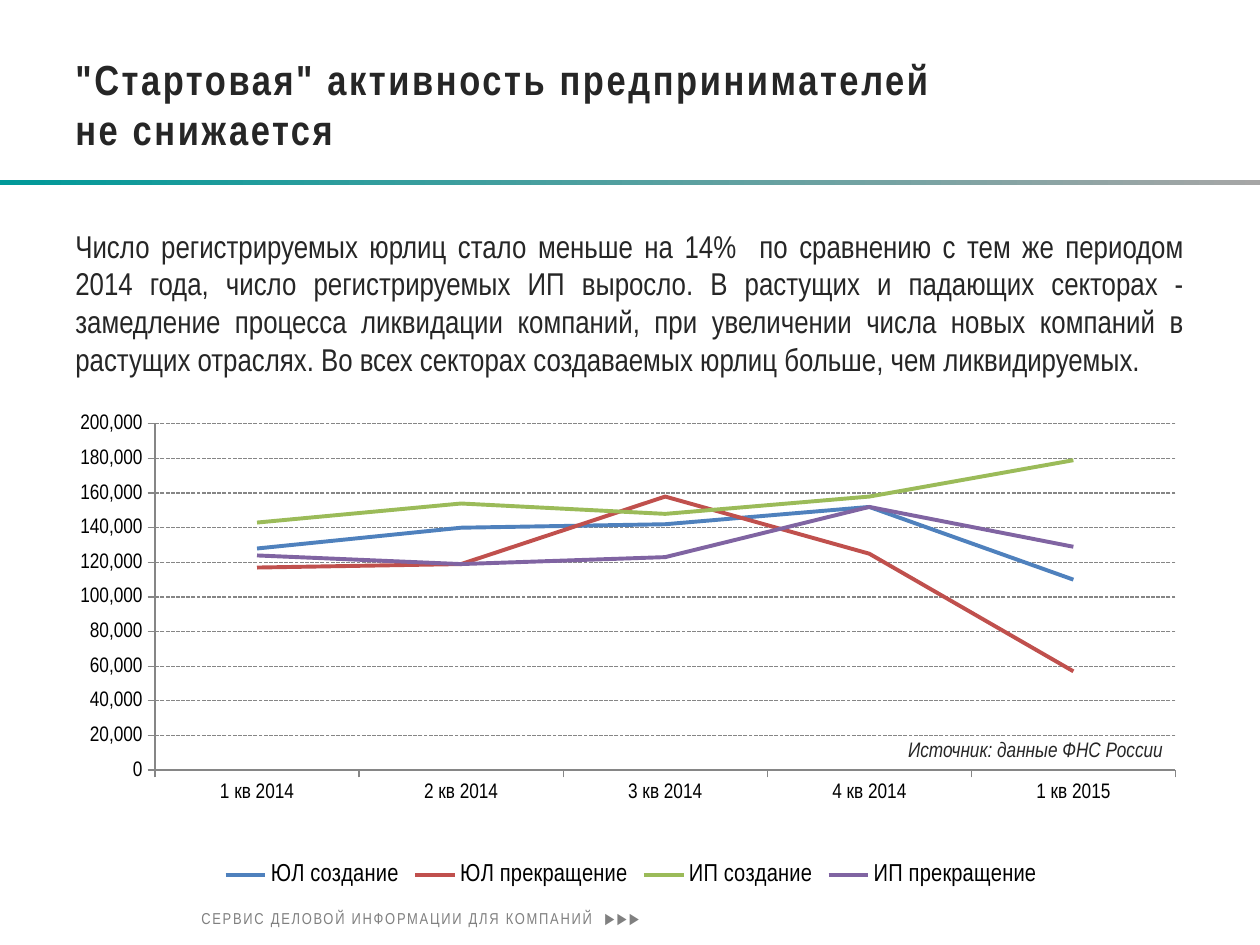
from lxml import etree
from pptx import Presentation
from pptx.chart.data import CategoryChartData
from pptx.dml.color import RGBColor
from pptx.enum.chart import (XL_CHART_TYPE, XL_LEGEND_POSITION, XL_MARKER_STYLE,
                             XL_TICK_LABEL_POSITION, XL_TICK_MARK)
from pptx.enum.dml import MSO_LINE
from pptx.enum.shapes import MSO_SHAPE
from pptx.enum.text import MSO_ANCHOR, PP_ALIGN
from pptx.oxml.ns import qn
from pptx.util import Inches, Pt

LINE_CHART = XL_CHART_TYPE.LINE
NO_MARKER = XL_MARKER_STYLE.NONE
LABELS_LOW = XL_TICK_LABEL_POSITION.LOW
TICK_OUT, TICK_NONE = XL_TICK_MARK.OUTSIDE, XL_TICK_MARK.NONE
LEGEND_BOTTOM = XL_LEGEND_POSITION.BOTTOM
SQUARE_DOT = MSO_LINE.SQUARE_DOT
RECTANGLE = MSO_SHAPE.RECTANGLE
TOP, MIDDLE = MSO_ANCHOR.TOP, MSO_ANCHOR.MIDDLE
LEFT, RIGHT, JUSTIFY = PP_ALIGN.LEFT, PP_ALIGN.RIGHT, PP_ALIGN.JUSTIFY

COLORS = {
    "text": "262626", "footer": "808080", "axis": "868686", "label": "000000",
    "teal": "009999", "grey": "A6A6A6",
    "blue": "4F81BD", "red": "C0504D", "green": "9BBB59", "purple": "8064A2",
}


def rgb(name):
    return RGBColor.from_string(COLORS[name])


class SlideBuilder:
    font_name = "Arial Narrow"

    def __init__(self, page):
        self.page = page

    def text(self, place, lines, size, color="text", align=LEFT, anchor=TOP,
             bold=False, italic=False, spacing=0):
        box = self.page.shapes.add_textbox(*map(Inches, place))
        frame = box.text_frame
        frame.word_wrap = True
        frame.vertical_anchor = anchor
        para = frame.paragraphs[0]
        para.alignment = align
        for index, line in enumerate(lines):
            if index:
                para.add_line_break()
            span = para.add_run()
            span.text = line
            self.style(span.font, size, color)
            span.font.bold, span.font.italic = bold, italic
            if spacing:
                span.font._element.set("spc", str(int(spacing * 100)))

    def style(self, font, size, color="label"):
        font.name = self.font_name
        font.size = Pt(size)
        font.color.rgb = rgb(color)

    def gradient_band(self, place, start, end):
        band = self.page.shapes.add_shape(RECTANGLE, *map(Inches, place))
        band.shadow.inherit = False
        band.line.fill.background()
        band.fill.gradient()
        band.fill.gradient_angle = 0
        for stop, name in zip(band.fill.gradient_stops, (start, end)):
            stop.color.rgb = rgb(name)

    def line_chart(self, place, categories, series_rows, plot_area):
        data = CategoryChartData(number_format="#,##0")
        data.categories = categories
        for name, _, values in series_rows:
            data.add_series(name, values)
        chart = self.page.shapes.add_chart(
            LINE_CHART, *map(Inches, place), data).chart
        chart.has_title = False
        self.style(chart.font, 18)
        chart.plots[0].vary_by_categories = False

        # Series lines
        for series, (_, color, _) in zip(chart.plots[0].series, series_rows):
            series.smooth = False
            series.marker.style = NO_MARKER
            series.format.line.color.rgb = rgb(color)
            series.format.line.width = Pt(2.25)

        # Axes and gridlines
        for axis in (chart.category_axis, chart.value_axis):
            axis.major_tick_mark, axis.minor_tick_mark = TICK_OUT, TICK_NONE
            axis.format.line.color.rgb = rgb("axis")
            self.style(axis.tick_labels.font, 12)
        chart.category_axis.tick_label_position = LABELS_LOW
        scale = chart.value_axis
        scale.minimum_scale, scale.maximum_scale, scale.major_unit = 0, 200000, 20000
        scale.tick_labels.number_format = "#,##0"
        scale.tick_labels.number_format_is_linked = False
        grid = scale.major_gridlines.format.line
        grid.color.rgb = rgb("axis")
        grid.width = Pt(0.75)
        grid.dash_style = SQUARE_DOT

        # Legend
        chart.has_legend = True
        chart.legend.position = LEGEND_BOTTOM
        chart.legend.include_in_layout = False
        self.style(chart.legend.font, 14)
        self.fix_plot_area(chart, plot_area)

    def fix_plot_area(self, chart, fractions):
        area = chart._chartSpace.chart.plotArea
        for old in area.findall(qn("c:layout")):
            area.remove(old)
        layout = etree.Element(qn("c:layout"))
        area.insert(0, layout)
        manual = etree.SubElement(layout, qn("c:manualLayout"))
        settings = [("layoutTarget", "inner"), ("xMode", "edge"), ("yMode", "edge")]
        settings += zip("xywh", fractions)
        for tag, value in settings:
            etree.SubElement(manual, qn("c:" + tag)).set("val", str(value))


def main():
    deck = Presentation()
    deck.slide_width, deck.slide_height = Inches(10), Inches(7.5)
    slide = SlideBuilder(deck.slides.add_slide(deck.slide_layouts[6]))

    # Header band and footer
    slide.gradient_band((0, 1.43, 10, 0.04), "teal", "grey")
    slide.text((1.5, 7.17, 5.4, 0.24),
               ["СЕРВИС ДЕЛОВОЙ ИНФОРМАЦИИ ДЛЯ КОМПАНИЙ  ▶▶▶"],
               9, "footer", anchor=MIDDLE, spacing=1)

    # Title and message
    slide.text((0.5, 0.2, 9, 1.25),
               ['"Стартовая" активность предпринимателей', "не снижается"],
               24, anchor=MIDDLE, bold=True, spacing=1.5)
    slide.text((0.5, 1.75, 9, 1.84), [
        "Число регистрируемых юрлиц стало меньше на 14%  по сравнению с тем же "
        "периодом 2014 года, число регистрируемых ИП выросло. В растущих и "
        "падающих секторах - замедление процесса ликвидации компаний, при "
        "увеличении числа новых компаний в растущих отраслях. Во всех секторах "
        "создаваемых юрлиц больше, чем ликвидируемых."], 18, align=JUSTIFY)

    # Registrations and closures by quarter
    quarters = ["1 кв 2014", "2 кв 2014", "3 кв 2014", "4 кв 2014", "1 кв 2015"]
    series_rows = [
        ("ЮЛ создание", "blue", (128000, 140000, 142000, 152000, 110000)),
        ("ЮЛ прекращение", "red", (117000, 119000, 158000, 125000, 57000)),
        ("ИП создание", "green", (143000, 154000, 148000, 158000, 179000)),
        ("ИП прекращение", "purple", (124000, 119000, 123000, 152000, 129000)),
    ]
    slide.line_chart((0.51, 3.21, 9, 3.87), quarters, series_rows,
                     (0.08, 0.04, 0.9, 0.71))

    # Source note
    slide.text((5.39, 5.8, 3.94, 0.3), ["Источник: данные ФНС России"],
               12, align=RIGHT, italic=True)

    deck.save("out.pptx")


if __name__ == "__main__":
    main()
